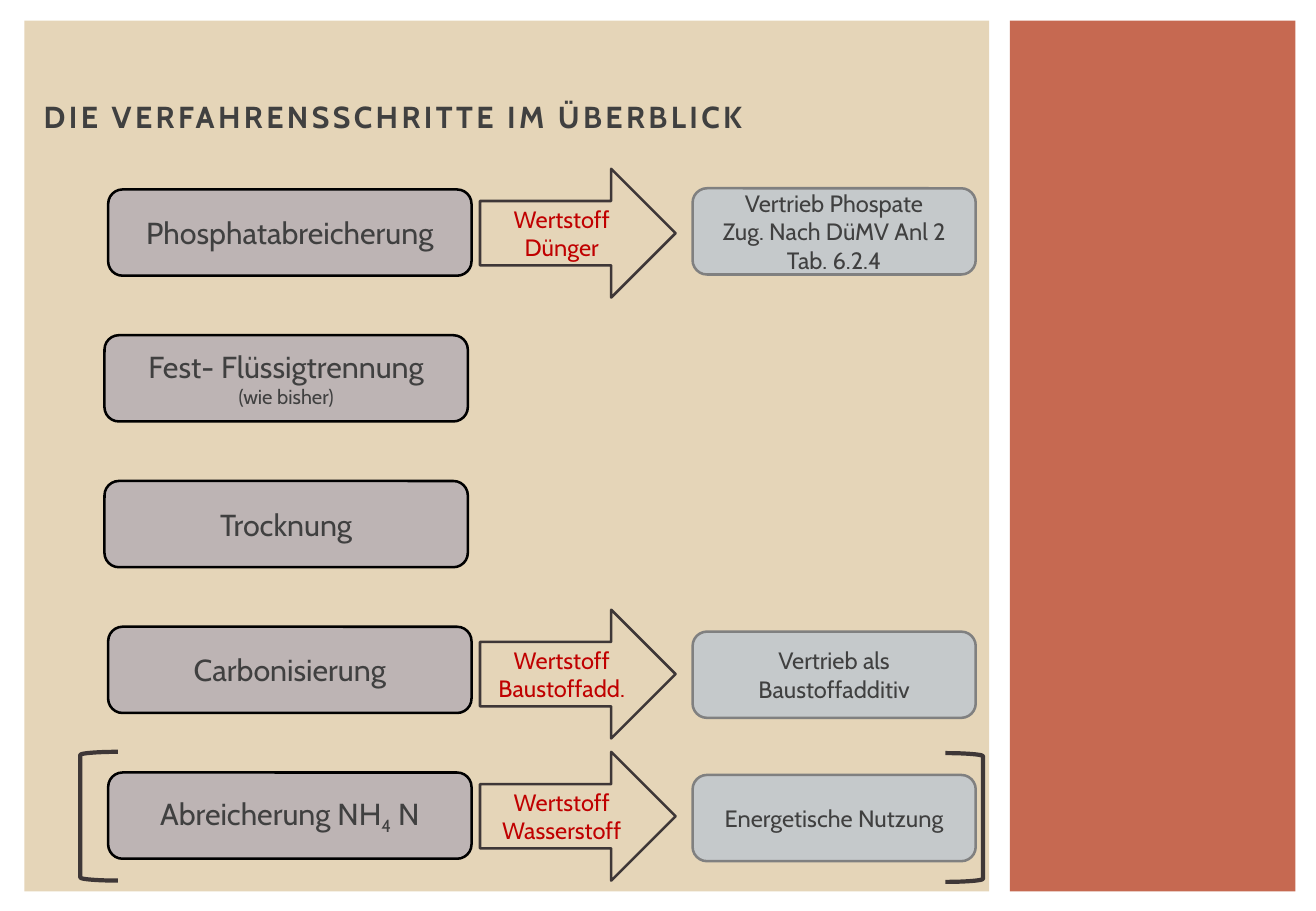
"""Builds the overview slide of the process steps and their products."""
import pptx
import pptx.util
import pptx.dml.color
import pptx.enum.shapes
import pptx.enum.text

Inches = pptx.util.Inches
SHAPE = pptx.enum.shapes.MSO_SHAPE
ALIGN = pptx.enum.text.PP_ALIGN

TITLE = "DIE VERFAHRENSSCHRITTE IM ÜBERBLICK"
STEPS = [
    (0.89, [("Phosphatabreicherung", {})]),
    (0.86, [("Fest- Flüssigtrennung\v", {}), ("(wie bisher)", {"size": 12})]),
    (0.86, [("Trocknung", {})]),
    (0.89, [("Carbonisierung", {})]),
    (0.89, [("Abreicherung NH", {}), ("4", {"baseline": -25000}), (" N", {})]),
]
PRODUCTS = [
    (1.39, "Wertstoff Dünger", 1.55,
     ["Vertrieb Phospate", "Zug. Nach DüMV Anl 2 Tab. 6.2.4"]),
    (5.02, "Wertstoff Baustoffadd.", 5.2, ["Vertrieb als Baustoffadditiv"]),
    (6.19, "Wertstoff Wasserstoff", 6.38, ["Energetische Nutzung"]),
]
PANELS = [(8.31, 2.35, "accent"), (0.2, 7.94, "sand")]
BRACKETS = [(0.66, 6.19, 0), (7.78, 6.2, 180)]

COLORS = {
    "accent": "C66951", "sand": "E5D5B8", "text": "404040", "step": "BDB4B4",
    "black": "000000", "arrow": "3E3737", "red": "C00000", "product": "C5C9CB",
    "grey": "808080",
}
STEP_TOP, STEP_PITCH, BOX_HEIGHT = 1.56, 1.2, 0.71


def rgb(name):
    """Returns the named colour."""
    return pptx.dml.color.RGBColor.from_string(COLORS[name])


def add_box(slide, kind, place, fill=None, line=None, width=1.5):
    """Adds a preset shape with the given fill and outline."""
    box = slide.shapes.add_shape(kind, *map(Inches, place))
    box.shadow.inherit = False
    if fill:
        box.fill.solid()
        box.fill.fore_color.rgb = rgb(fill)
    else:
        box.fill.background()
    if line:
        box.line.color.rgb = rgb(line)
        box.line.width = pptx.util.Pt(width)
    else:
        box.line.fill.background()
    return box


def write(box, paragraphs, size, color, align=ALIGN.CENTER, bold=False):
    """Fills a shape with paragraphs made of (text, format) runs."""
    frame = box.text_frame
    for name, value in {"word_wrap": True,
                        "auto_size": pptx.enum.text.MSO_AUTO_SIZE.NONE,
                        "vertical_anchor": pptx.enum.text.MSO_ANCHOR.MIDDLE}.items():
        setattr(frame, name, value)
    for index, runs in enumerate(paragraphs):
        paragraph = frame.add_paragraph() if index else frame.paragraphs[0]
        paragraph.alignment = align
        for text, extra in runs:
            run = paragraph.add_run()
            run.text = text.rstrip("\v")
            font = {"name": "Cabin", "size": pptx.util.Pt(extra.get("size", size)),
                    "bold": bold}
            for name, value in font.items():
                setattr(run.font, name, value)
            run.font.color.rgb = rgb(color)
            for name in ("baseline", "spc"):
                if name in extra:
                    run._r.get_or_add_rPr().set(name, str(extra[name]))
            if text.endswith("\v"):
                paragraph.add_line_break()


def main():
    """Lays out the slide and saves it."""
    deck = pptx.Presentation()
    deck.slide_width, deck.slide_height = Inches(10.83), Inches(7.5)
    slide = deck.slides.add_slide(deck.slide_layouts[5])

    for left, width, fill in PANELS:
        add_box(slide, SHAPE.RECTANGLE, (left, 0.17, width, 7.17), fill)

    title = slide.shapes.title
    title.element.getparent().append(title.element)
    for name, value in {"left": 0.26, "top": 0.17, "width": 7.76, "height": 1.57}.items():
        setattr(title, name, Inches(value))
    write(title, [[(TITLE, {"spc": 200})]], 18, "text", ALIGN.LEFT, True)

    for row, (left, runs) in enumerate(STEPS):
        place = (left, STEP_TOP + row * STEP_PITCH, 2.99, BOX_HEIGHT)
        step = add_box(slide, SHAPE.ROUNDED_RECTANGLE, place, "step", "black")
        write(step, [runs], 18, "text")

    for arrow_top, material, product_top, lines in PRODUCTS:
        arrow = add_box(slide, SHAPE.RIGHT_ARROW, (3.95, arrow_top, 1.61, 1.06), line="arrow")
        write(arrow, [[(material, {})]], 14, "red")
        product = add_box(slide, SHAPE.ROUNDED_RECTANGLE,
                          (5.7, product_top, 2.33, BOX_HEIGHT), "product", "grey")
        write(product, [[(line, {})] for line in lines], 14, "text")

    for left, top, rotation in BRACKETS:
        bracket = add_box(slide, SHAPE.LEFT_BRACKET, (left, top, 0.31, 1.06),
                          line="arrow", width=2.5)
        bracket.rotation = rotation

    deck.save("out.pptx")


if __name__ == "__main__":
    main()
